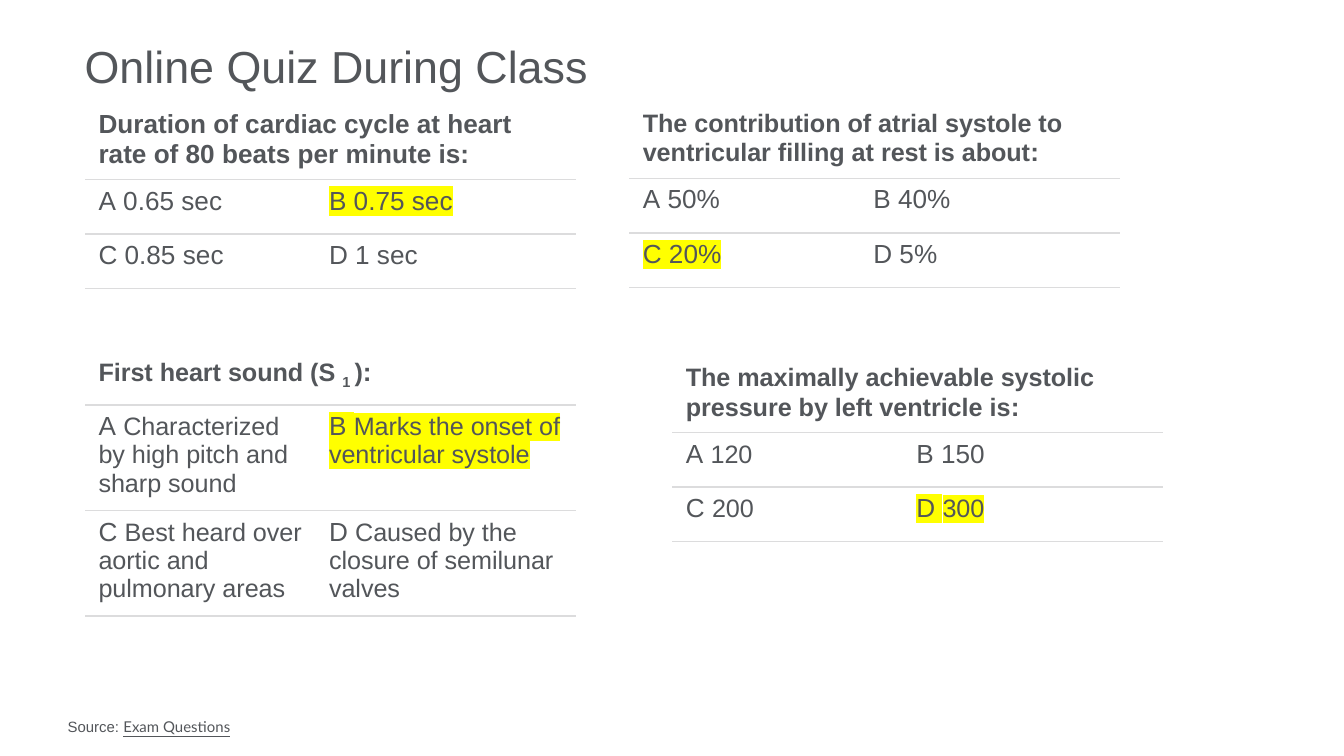
"""Build a slide with four quiz tables, their right answers highlighted."""
from lxml.etree import SubElement
from pptx import Presentation
from pptx.dml.color import RGBColor as Color
from pptx.enum.text import MSO_ANCHOR as Anchor
from pptx.oxml import parse_xml
from pptx.oxml.ns import nsdecls, qn
from pptx.util import Inches, Pt

GRAY = Color(0x53, 0x56, 0x5A)
WHITE = Color(0xFF, 0xFF, 0xFF)
RULE = Color(0xDC, 0xDC, 0xDD)
MARK = Color(0xFF, 0xFF, 0x00)
GAP = chr(160)

deck = Presentation()
deck.slide_width = Inches(10)
deck.slide_height = deck.slide_width * 9 // 16
col, row = deck.slide_width / 100, deck.slide_height / 100
slide = deck.slides.add_slide(deck.slide_layouts[6])


def put(para, text, size, bold=False, face="Arial", mark=False):
    run = para.add_run()
    run.text = text
    font = run.font
    font.size, font.bold, font.name = Pt(size), bold, face
    font.color.rgb = GRAY
    if mark:
        fill = run._r.rPr.find(qn("a:solidFill"))
        fill.addnext(parse_xml(
            f'<a:highlight {nsdecls("a")}><a:srgbClr val="{MARK}"/></a:highlight>'))
    return run


def edge(cell, top):
    cell.fill.solid()
    cell.fill.fore_color.rgb = WHITE
    props = cell._tc.get_or_add_tcPr()
    sides = [("lnL", False), ("lnR", False), ("lnT", top), ("lnB", True)]
    for spot, (tag, shown) in enumerate(sides):
        line = SubElement(props, qn(f"a:{tag}"), w=str(Pt(1)))
        if shown:
            fill = SubElement(line, qn("a:solidFill"))
            SubElement(fill, qn("a:srgbClr"), val=str(RULE))
        else:
            SubElement(line, qn("a:noFill"))
        props.insert(spot, line)


title = slide.shapes.add_textbox(
    int(6.3 * col), int(3.73 * row), int(85.5 * col), int(9.78 * row))
frame = title.text_frame
frame.word_wrap = True
frame.vertical_anchor = Anchor.MIDDLE
frame.margin_left = frame.margin_right = frame.margin_top = frame.margin_bottom = 0
put(frame.paragraphs[0], "Online Quiz During Class", 24)

source = slide.shapes.add_textbox(
    int(4.04 * col), int(94.04 * row), int(91.9 * col), int(4.27 * row))
frame = source.text_frame
frame.word_wrap = True
put(frame.paragraphs[0], "Source: ", 8)
put(frame.paragraphs[0], "Exam Questions", 8, face="Lato").font.underline = True

quizzes = [
    (6.33, 13.66, 14, 14, ["Duration of cardiac cycle at heart rate of 80 beats per minute is"],
     ["A|0.65 sec", "B|0.75 sec", "C|0.85 sec", "D|1 sec"], "B"),
    (46.83, 13.66, 13.5, 14,
     ["The contribution of atrial systole to ventricular filling at rest is about"],
     ["A|50%", "B|40%", "C|20%", "D|5%"], "C"),
    (6.33, 46.4, 13.5, 13.5, [f"First heart sound (S{GAP}", f"1{GAP}", ")"],
     ["A|Characterized by high pitch and sharp sound",
      "B|Marks the onset of ventricular systole",
      "C|Best heard over aortic and pulmonary areas",
      "D|Caused by the closure of semilunar valves"], "B"),
    (50.03, 47.29, 13.5, 13.5,
     ["The maximally achievable systolic pressure by left ventricle is"],
     ["A|120", "B 150", "C|200", "D|300"], "D"),
]

for left, top, head, body, ask, picks, right in quizzes:
    table = slide.shapes.add_table(
        3, 2, int(left * col), int(top * row), int(36.5 * col), int(21.63 * row)).table
    table.first_row = table.horz_banding = False
    table.columns[0].width, table.columns[1].width = int(17.15 * col), int(19.35 * col)
    for line in table.rows:
        line.height = int(7.21 * row)
    for spot, cell in enumerate(table.iter_cells()):
        edge(cell, spot > 1)

    first = table.cell(0, 0)
    first.merge(table.cell(0, 1))
    para = first.text_frame.paragraphs[0]
    for spot, part in enumerate(ask):
        run = put(para, part, head, bold=True)
        if spot == 1:
            run._r.rPr.set("baseline", "-25000")
    put(para, ":", 14, bold=True)

    for spot, pick in enumerate(picks):
        para = table.cell(1 + spot // 2, spot % 2).text_frame.paragraphs[0]
        key, bar, rest = pick.partition("|")
        put(para, key + GAP * len(bar), 14, mark=key == right)
        if rest:
            put(para, rest, body, mark=key == right)

deck.save("out.pptx")
